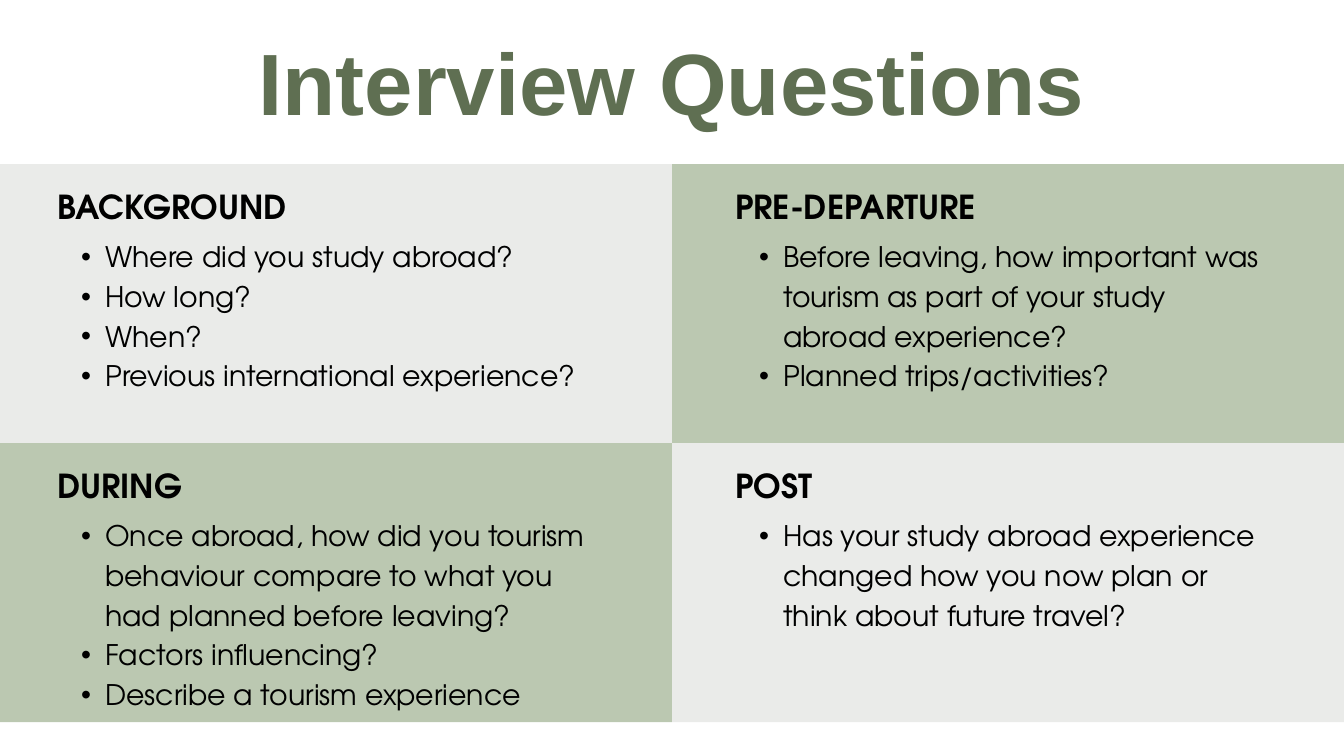
from dataclasses import dataclass

from lxml.etree import SubElement
from pptx import Presentation
from pptx.dml.color import RGBColor
from pptx.enum.shapes import MSO_SHAPE
from pptx.enum.text import MSO_AUTO_SIZE, PP_ALIGN
from pptx.oxml.ns import qn
from pptx.slide import Slide
from pptx.text.text import TextFrame, _Paragraph
from pptx.util import Pt


@dataclass(frozen=True)
class TextStyle:
    font: str
    size: float
    line_spacing: float
    color: RGBColor
    bold: bool = False


@dataclass(frozen=True)
class Theme:
    gray: RGBColor = RGBColor(0xEA, 0xEB, 0xE9)
    green: RGBColor = RGBColor(0xBB, 0xC8, 0xB1)
    title: TextStyle = TextStyle("Arial", 93.2, 130.5, RGBColor(0x5F, 0x6F, 0x52), True)
    heading: TextStyle = TextStyle("TeX Gyre Adventor", 35.4, 49.5, RGBColor(0, 0, 0), True)
    body: TextStyle = TextStyle("TeX Gyre Adventor", 30.4, 42.5, RGBColor(0, 0, 0))


@dataclass(frozen=True)
class Topic:
    heading: str
    questions: tuple[str, ...]
    column: int
    row: int
    line_count: int


THEME = Theme()
SLIDE_WIDTH, SLIDE_HEIGHT = 1440, 810
PANEL_LEFTS = (-54, 720)
PANEL_WIDTH, PANEL_HEIGHT = 774, 299
PANELS_TOP = 175.8
TEXT_LEFTS = (61.2, 787.7)
HEADING_OFFSET, BODY_OFFSET = 16.5, 74.8
BULLET_MARGIN, BULLET_HANG = 51.6, 25.8

TOPICS = (
    Topic("BACKGROUND", (
        "Where did you study abroad?",
        "How long?",
        "When?",
        "Previous international experience?",
    ), 0, 0, 4),
    Topic("DURING", (
        "Once abroad, how did you tourism behaviour compare to what you had planned before leaving?",
        "Factors influencing?",
        "Describe a tourism experience",
    ), 0, 1, 5),
    Topic("PRE-DEPARTURE", (
        "Before leaving, how important was tourism as part of your study abroad experience?",
        "Planned trips/activities?",
    ), 1, 0, 4),
    Topic("POST", (
        "Has your study abroad experience changed how you now plan or think about future travel?",
    ), 1, 1, 3),
)


def add_text_frame(slide: Slide, left: float, top: float, width: float, height: float) -> TextFrame:
    shape = slide.shapes.add_textbox(Pt(left), Pt(top), Pt(width), Pt(height))
    frame = shape.text_frame
    frame.word_wrap = True
    frame.auto_size = MSO_AUTO_SIZE.SHAPE_TO_FIT_TEXT
    frame.margin_left = frame.margin_top = frame.margin_right = frame.margin_bottom = 0
    return frame


def write_paragraph(paragraph: _Paragraph, text: str, style: TextStyle) -> None:
    paragraph.line_spacing = Pt(style.line_spacing)
    run = paragraph.add_run()
    run.text = text
    run.font.name = style.font
    run.font.size = Pt(style.size)
    run.font.bold = style.bold
    run.font.color.rgb = style.color


def add_bullet(paragraph: _Paragraph) -> None:
    paragraph.level = 1
    properties = paragraph._p.get_or_add_pPr()
    properties.set("marL", str(Pt(BULLET_MARGIN)))
    properties.set("indent", str(-Pt(BULLET_HANG)))
    SubElement(properties, qn("a:buFont"), typeface="Arial")
    SubElement(properties, qn("a:buChar"), char="•")


def draw_title(slide: Slide, text: str) -> None:
    paragraph = add_text_frame(slide, 189.5, 11.5, 1061, 126).paragraphs[0]
    paragraph.alignment = PP_ALIGN.CENTER
    write_paragraph(paragraph, text, THEME.title)


def draw_topic(slide: Slide, topic: Topic) -> None:
    top = PANELS_TOP + topic.row * PANEL_HEIGHT
    panel = slide.shapes.add_shape(
        MSO_SHAPE.RECTANGLE, Pt(PANEL_LEFTS[topic.column]), Pt(top), Pt(PANEL_WIDTH), Pt(PANEL_HEIGHT)
    )
    panel.shadow.inherit = False
    panel.fill.solid()
    panel.fill.fore_color.rgb = THEME.gray if topic.column == topic.row else THEME.green
    panel.line.fill.background()

    left = TEXT_LEFTS[topic.column]
    heading = add_text_frame(slide, left, top + HEADING_OFFSET, 420, 53)
    write_paragraph(heading.paragraphs[0], topic.heading, THEME.heading)

    body_height = topic.line_count * THEME.body.line_spacing
    body = add_text_frame(slide, left, top + BODY_OFFSET, 571, body_height)
    for index, question in enumerate(topic.questions):
        paragraph = body.add_paragraph() if index else body.paragraphs[0]
        add_bullet(paragraph)
        write_paragraph(paragraph, question, THEME.body)


def main() -> None:
    presentation = Presentation()
    presentation.slide_width = Pt(SLIDE_WIDTH)
    presentation.slide_height = Pt(SLIDE_HEIGHT)
    slide = presentation.slides.add_slide(presentation.slide_layouts[6])
    draw_title(slide, "Interview Questions")
    for topic in TOPICS:
        draw_topic(slide, topic)
    presentation.save("out.pptx")


if __name__ == "__main__":
    main()
